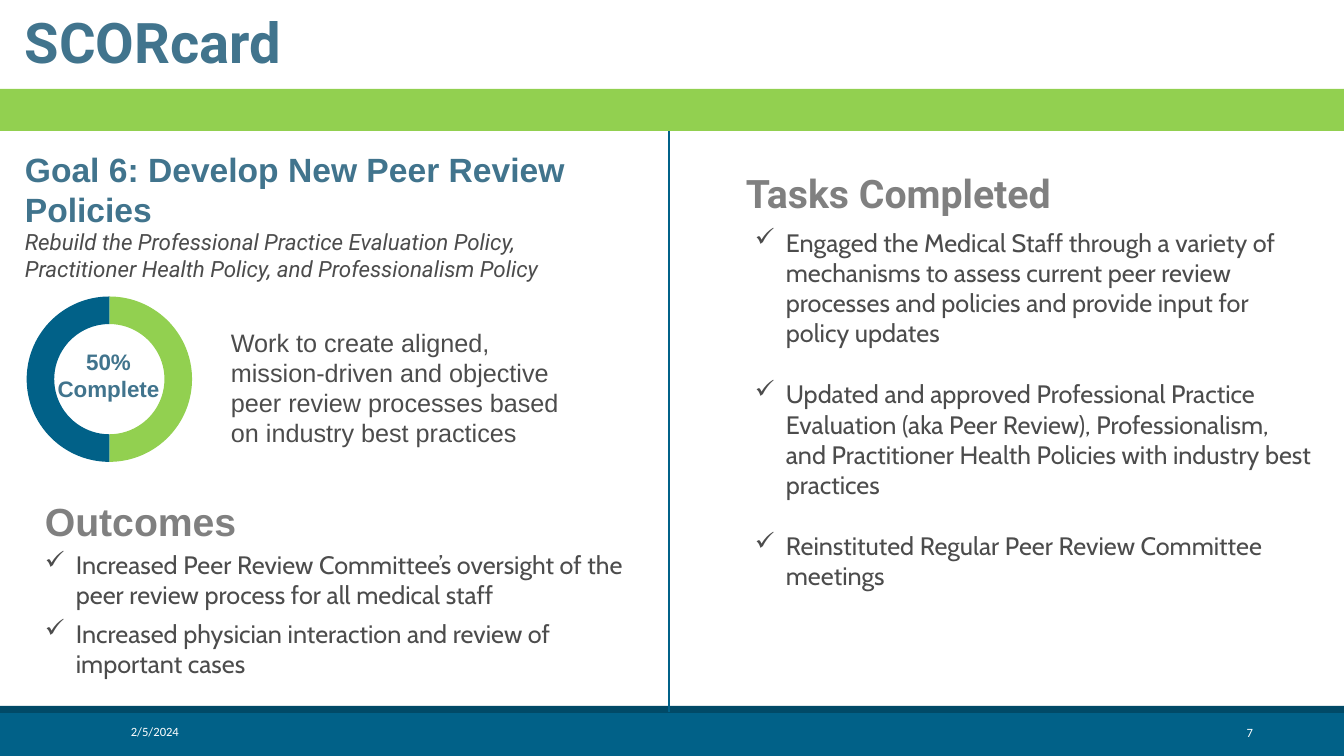
from lxml import etree
from pptx import Presentation
from pptx.chart.data import CategoryChartData as ChartData
from pptx.dml.color import RGBColor as RGB
from pptx.enum.chart import XL_CHART_TYPE as Kind
from pptx.enum.shapes import MSO_CONNECTOR as Link, MSO_SHAPE as Form
from pptx.enum.text import MSO_ANCHOR as Anchor, MSO_AUTO_SIZE as Auto, PP_ALIGN as Align
from pptx.oxml.ns import qn
from pptx.util import Emu, Pt

# Content
DONE = [
    "Engaged the Medical Staff through a variety of mechanisms to assess current "
    "peer review processes and policies and provide input for policy updates",
    "Updated and approved Professional Practice Evaluation (aka Peer Review), "
    "Professionalism, and Practitioner Health Policies with industry best practices",
    "Reinstituted Regular Peer Review Committee meetings",
]
GAINS = [
    "Increased Peer Review Committee’s oversight of the peer review process "
    "for all medical staff",
    "Increased physician interaction and review of\vimportant cases",
]
AIM = ("Work to create aligned, mission-driven and objective peer review "
       "processes based on industry best practices")
GOAL = "Goal 6: Develop New Peer Review Policies"
SCOPE = ("Rebuild the Professional Practice Evaluation Policy, "
         "Practitioner Health Policy, and Professionalism Policy")
CATS = ["1", "2", "3", "4"]
RINGS = {"Series 1": [0, 0, None, None], "Series 2": [50, 50, None, None]}

# Theme: colours, and styles as (font, size, colour, bold, italic)
THEME = {
    "green": "92D050", "blue": "016188", "navy": "014A67", "ink": "4C4C4C",
    "title": ("Roboto", 40, "41748D", True, False),
    "goal": ("Arial", 24, "41748D", True, False),
    "scope": ("Roboto", 16, "4C4C4C", False, True),
    "aim": ("Arial", 18, "4C4C4C", False, False),
    "score": ("Arial", 16, "41748D", True, False),
    "tasks": ("Roboto", 28, "808080", True, False),
    "gains": ("Arial", 28, "808080", True, False),
    "list": ("Cabin", 18, "4C4C4C", False, False),
    "foot": ("Calibri", 9, "FFFFFF", False, False),
}

# Layout in px: left, top, width, height
WIDE, HIGH = 1344, 756
BARS = [("blue", 712, 44), ("navy", 706, 7), ("green", 89, 42)]
SPLIT = (669, 131, 712)
RING = (6, 275, 188, 193)
PLOT = {"x": 0.11, "y": 0.11, "w": 0.88, "h": 0.92}
TEXTS = [
    ("foot", (1060, 720, 203, 25), ["7"], {"mid": True, "align": Align.RIGHT}),
    ("foot", (121, 712, 272, 40), ["2/5/2024"], {"mid": True, "grow": False}),
    ("title", (15, 3, 280, 78), ["SCORcard"], {"wrap": False}),
    ("aim", (221, 322, 373, 132), [AIM], {}),
    ("score", (43, 343, 131, 65), ["50%", "Complete"],
     {"mid": True, "align": Align.CENTER}),
    ("list", (745, 222, 577, 407), DONE, {"tick": True, "gap": 22}),
    ("scope", (15, 223, 578, 65), [SCOPE], {}),
    ("goal", (15, 144, 628, 92), [GOAL], {}),
    ("tasks", (736, 164, 420, 57), ["Tasks Completed"], {}),
    ("list", (35, 544, 628, 176), GAINS, {"tick": True, "gap": 6}),
    ("gains", (35, 492, 522, 57), ["Outcomes"], {}),
]
INDENT = 31


def px(n):
    return Emu(round(n * 12192000 / WIDE))


def place(box):
    return [px(n) for n in box]


def paint(fill, name):
    fill.solid()
    fill.fore_color.rgb = RGB.from_string(THEME[name])


def write(style, box, lines, wrap=True, mid=False, grow=True,
          align=None, tick=False, gap=0):
    frame = slide.shapes.add_textbox(*place(box)).text_frame
    frame.text = "\n".join(lines)
    frame.word_wrap = wrap
    frame.auto_size = Auto.SHAPE_TO_FIT_TEXT if grow else Auto.NONE
    frame.vertical_anchor = Anchor.MIDDLE if mid else Anchor.TOP
    face, size, tint, bold, slant = THEME[style]
    for para in frame.paragraphs:
        para.alignment = align
        if gap:
            para.space_after = Pt(gap)
        if tick:
            props = para._p.get_or_add_pPr()
            props.set("marL", str(px(INDENT)))
            props.set("indent", str(-px(INDENT)))
            etree.SubElement(props, qn("a:buChar")).set("char", "✓")
        for run in para.runs:
            font = run.font
            font.name, font.size = face, Pt(size)
            font.bold, font.italic = bold, slant
            font.color.rgb = RGB.from_string(tint)


deck = Presentation()
deck.slide_width, deck.slide_height = px(WIDE), px(HIGH)
slide = deck.slides.add_slide(deck.slide_layouts[6])

# Bars across the slide
for name, top, tall in BARS:
    bar = slide.shapes.add_shape(Form.RECTANGLE, *place((0, top, WIDE, tall)))
    bar.shadow.inherit = False
    paint(bar.fill, name)
    bar.line.fill.background()

# Progress ring
data = ChartData()
data.categories = CATS
for name, vals in RINGS.items():
    data.add_series(name, vals)
chart = slide.shapes.add_chart(Kind.DOUGHNUT, *place(RING), data).chart
chart.has_legend = chart.has_title = False
chart.font.name, chart.font.size = "Calibri", Pt(10)
chart.font.color.rgb = RGB.from_string(THEME["ink"])
for ring in chart.plots[0].series:
    for i, name in enumerate(("green", "blue")):
        part = ring.points[i].format
        paint(part.fill, name)
        part.line.fill.background()

# Fixed plot area inside the ring's frame
area = chart._chartSpace.find(".//" + qn("c:plotArea"))
for old in area.findall(qn("c:layout")):
    area.remove(old)
layout = etree.Element(qn("c:layout"))
area.insert(0, layout)
manual = etree.SubElement(layout, qn("c:manualLayout"))
rules = {"layoutTarget": "inner", "xMode": "edge", "yMode": "edge", **PLOT}
for key, val in rules.items():
    etree.SubElement(manual, qn("c:" + key)).set("val", str(val))

# Texts
for style, box, lines, opts in TEXTS:
    write(style, box, lines, **opts)

# Divider between the columns
x, top, base = SPLIT
rule = slide.shapes.add_connector(Link.STRAIGHT, *place((x, base, x, top)))
rule.line.color.rgb = RGB.from_string(THEME["blue"])
rule.line.width = Pt(1)
etree.SubElement(rule._element.spPr, qn("a:effectLst"))

deck.save("out.pptx")
